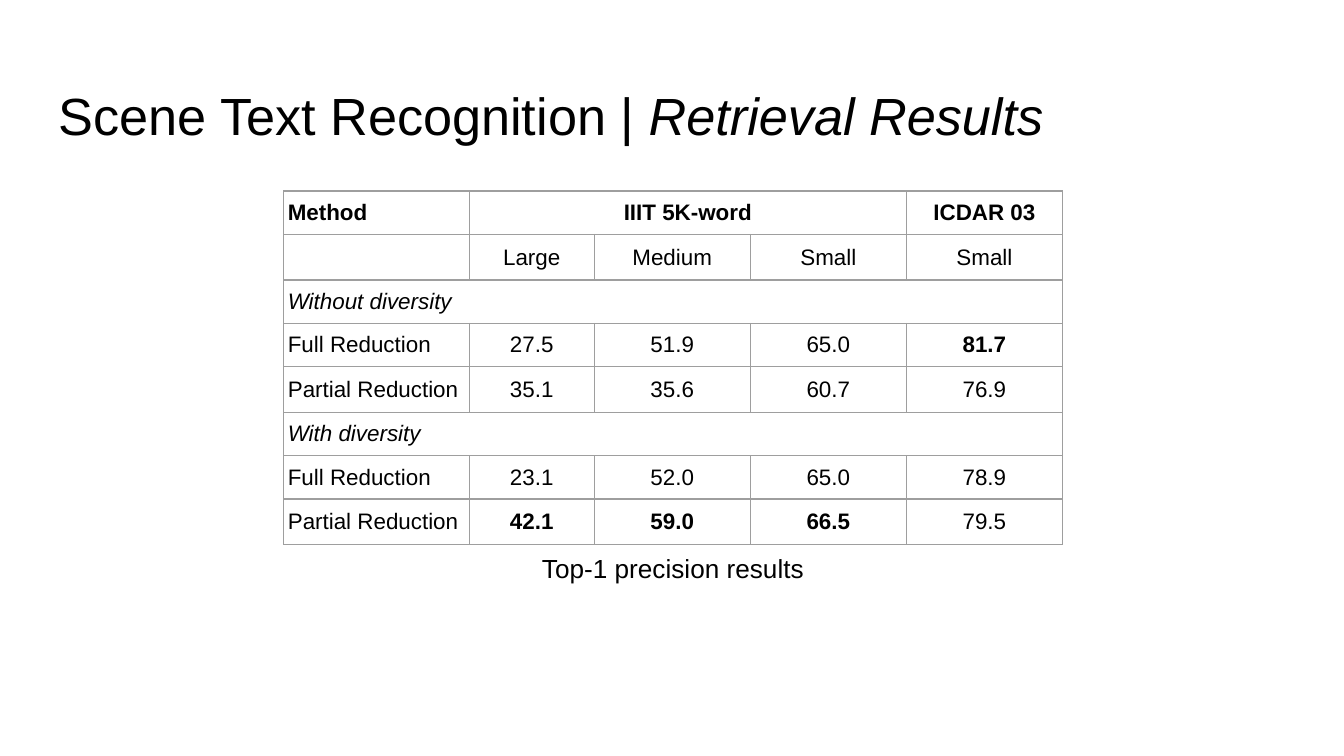
from dataclasses import dataclass

from lxml.etree import SubElement
from pptx import Presentation
from pptx.dml.color import RGBColor
from pptx.enum.text import MSO_ANCHOR as Anchor, PP_ALIGN as Align
from pptx.oxml.ns import qn
from pptx.util import Cm, Pt

COLORS = {"text": "000000", "background": "FFFFFF", "border": "9E9E9E"}
FONT = "Arial"
COLUMN_WIDTHS = [3.51, 2.36, 2.95, 2.95, 2.95]
ROW_HEIGHT = 0.82
PARTIAL_ROW_HEIGHT = 0.86


@dataclass(frozen=True)
class Row:
    label: str
    values: tuple[str, ...] = ()
    bold_columns: tuple[int, ...] = ()
    height: float = ROW_HEIGHT
    merge: tuple[int, int] | None = None
    italic: bool = False


@dataclass(frozen=True)
class Box:
    left: float
    top: float
    width: float
    height: float
    inset_top: float = 0.25


ROWS = [
    Row("Method", ("IIIT 5K-word", "", "", "ICDAR 03"), (0, 1, 4), merge=(1, 3)),
    Row("", ("Large", "Medium", "Small", "Small")),
    Row("Without diversity", merge=(0, 4), italic=True),
    Row("Full Reduction", ("27.5", "51.9", "65.0", "81.7"), (4,)),
    Row("Partial Reduction", ("35.1", "35.6", "60.7", "76.9"), height=PARTIAL_ROW_HEIGHT),
    Row("With diversity", merge=(0, 4), italic=True),
    Row("Full Reduction", ("23.1", "52.0", "65.0", "78.9")),
    Row("Partial Reduction", ("42.1", "59.0", "66.5", "79.5"), (1, 2, 3), PARTIAL_ROW_HEIGHT),
]


def add_text(paragraph, text: str, *, size: float = 12, bold: bool = False,
             italic: bool = False, align=Align.LEFT) -> None:
    paragraph.alignment = align
    run = paragraph.add_run()
    run.text = text
    font = run.font
    font.name, font.size, font.bold, font.italic = FONT, Pt(size), bold, italic
    font.color.rgb = RGBColor.from_string(COLORS["text"])


def add_box(slide, box: Box, anchor):
    shape = slide.shapes.add_textbox(Cm(box.left), Cm(box.top), Cm(box.width), Cm(box.height))
    frame = shape.text_frame
    frame.word_wrap = True
    frame.vertical_anchor = anchor
    frame.margin_left = frame.margin_right = frame.margin_bottom = Cm(0.25)
    frame.margin_top = Cm(box.inset_top)
    return frame.paragraphs[0]


def format_cell(cell) -> None:
    cell.margin_left = cell.margin_right = Cm(0.08)
    cell.margin_top = cell.margin_bottom = Cm(0.05)
    cell.vertical_anchor = Anchor.MIDDLE
    properties = cell._tc.get_or_add_tcPr()
    for side in ("a:lnL", "a:lnR", "a:lnT", "a:lnB"):
        line = SubElement(properties, qn(side), w=str(Pt(0.75)))
        fill = SubElement(line, qn("a:solidFill"))
        SubElement(fill, qn("a:srgbClr"), val=COLORS["border"])
    cell.fill.background()


def add_results_table(slide, left: float, top: float, rows: list[Row]) -> None:
    table = slide.shapes.add_table(
        len(rows), len(COLUMN_WIDTHS), Cm(left), Cm(top),
        Cm(sum(COLUMN_WIDTHS)), Cm(sum(row.height for row in rows))).table
    table.first_row = table.horz_banding = False
    for column, width in zip(table.columns, COLUMN_WIDTHS):
        column.width = Cm(width)
    for row_index, row in enumerate(rows):
        table.rows[row_index].height = Cm(row.height)
        texts = (row.label, *row.values)
        for column_index in range(len(COLUMN_WIDTHS)):
            cell = table.cell(row_index, column_index)
            format_cell(cell)
            text = texts[column_index] if column_index < len(texts) else ""
            add_text(cell.text_frame.paragraphs[0], text,
                     bold=column_index in row.bold_columns, italic=row.italic,
                     align=Align.CENTER if column_index else Align.LEFT)
        if row.merge:
            first, last = row.merge
            table.cell(row_index, first).merge(table.cell(row_index, last))


def main() -> None:
    presentation = Presentation()
    presentation.slide_width, presentation.slide_height = Cm(25.4), Cm(14.29)
    slide = presentation.slides.add_slide(presentation.slide_layouts[6])
    background = slide.background.fill
    background.solid()
    background.fore_color.rgb = RGBColor.from_string(COLORS["background"])

    title = add_box(slide, Box(0.86, 1.24, 23.67, 1.6, inset_top=0.33), Anchor.TOP)
    add_text(title, "Scene Text Recognition | ", size=28)
    add_text(title, "Retrieval Results", size=28, italic=True)

    add_results_table(slide, 5.36, 3.61, ROWS)

    caption = add_box(slide, Box(3.51, 10.34, 18.42, 0.81), Anchor.MIDDLE)
    add_text(caption, "Top-1 precision results", size=14, align=Align.CENTER)
    presentation.save("out.pptx")


if __name__ == "__main__":
    main()
